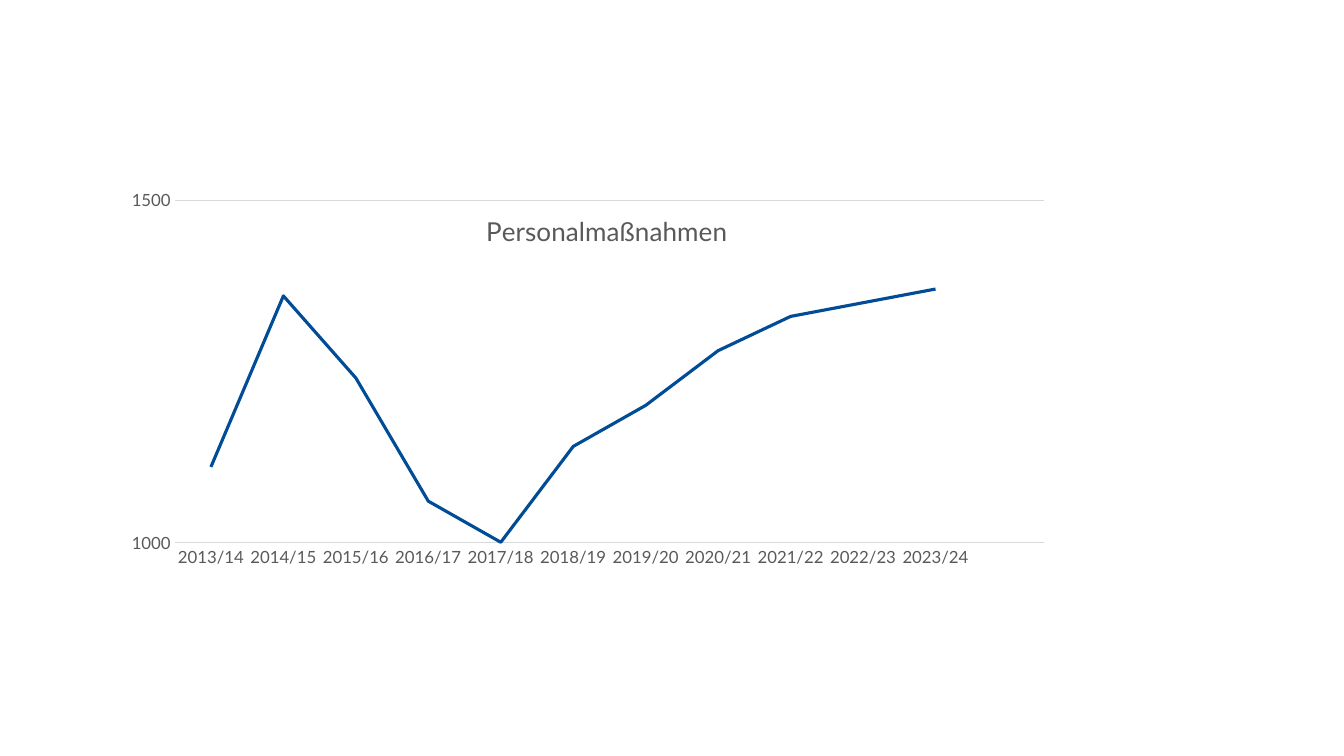
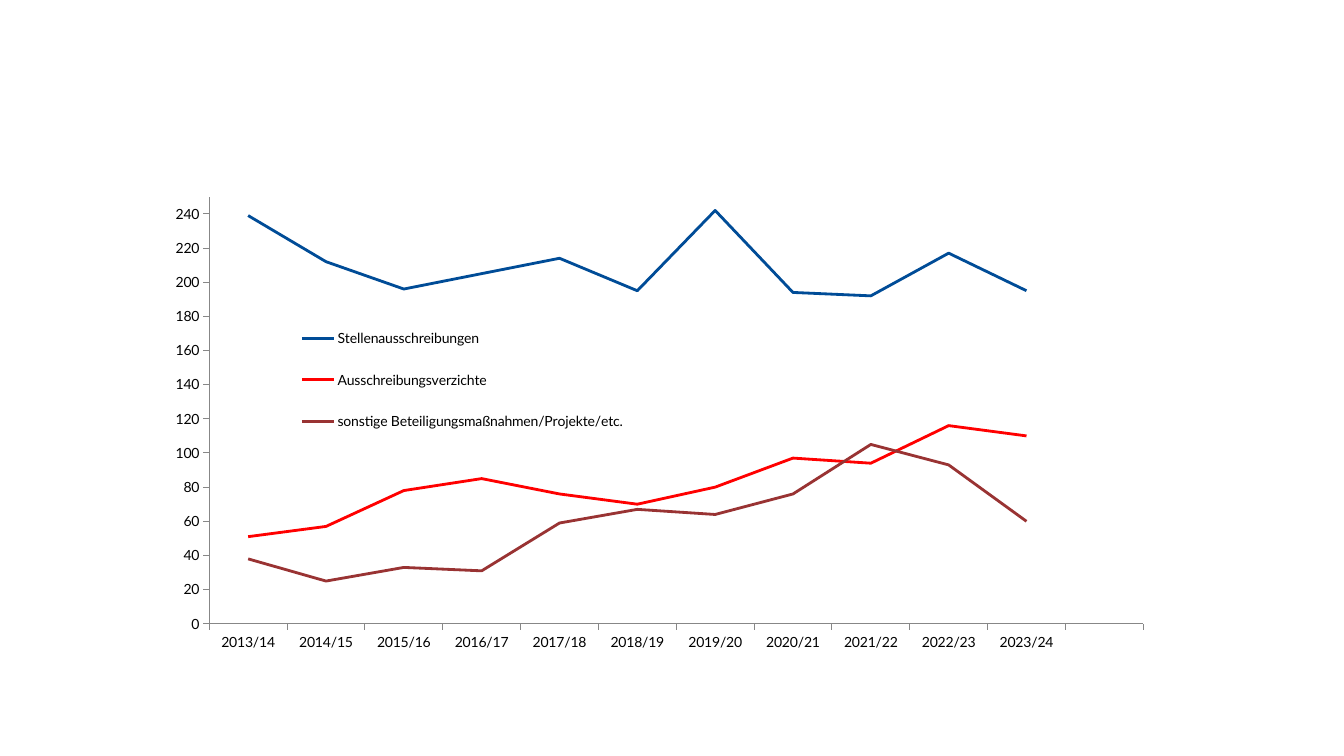
"""Two line charts on staff measures by school year."""
from dataclasses import dataclass
from typing import Any, Optional

from lxml.etree import SubElement
from pptx import Presentation
from pptx.chart.data import CategoryChartData as Data
from pptx.dml.color import RGBColor as Rgb
from pptx.enum.chart import XL_CHART_TYPE as Kind
from pptx.enum.chart import XL_LEGEND_POSITION as Pos
from pptx.enum.chart import XL_TICK_MARK as Tick
from pptx.oxml.ns import qn
from pptx.util import Emu, Pt

PX = 9525
Frame = tuple[float, ...]


@dataclass(frozen=True)
class Theme:
    """Colours and type sizes of the deck."""

    font: str = "Lato"
    blue: str = "004C97"
    red: str = "FF0000"
    brown: str = "993333"
    black: str = "000000"
    text: str = "595959"
    grid: str = "D9D9D9"
    axis: str = "878787"
    small: float = 10
    label: float = 12
    title: float = 18.6
    hair: float = 0.75


@dataclass(frozen=True)
class Line:
    """One series with its colour."""

    name: str
    color: str
    vals: tuple[int, ...]


@dataclass(frozen=True)
class Plot:
    """One chart slide."""

    box: tuple[int, int, int, int]
    inner: Frame
    lines: tuple[Line, ...]
    width: float
    size: float
    color: str
    rule: str
    tick: Tick
    scale: dict[str, float]
    grid: bool = False
    title: Optional[str] = None
    head: Frame = ()
    key: Frame = ()


THEME = Theme()
YEARS = [f"{y}/{y - 1999}" for y in range(2013, 2024)]
STAFF = "Personalmaßnahmen"
PLOTS = (
    Plot(
        box=(110, 179, 1025, 363), inner=(0.055, 0.032, 0.808, 0.898),
        lines=(
            Line(STAFF, THEME.blue,
                 (1110, 1360, 1240, 1060, 1000, 1140, 1200, 1280, 1330, 1350, 1370)),
        ),
        width=2.25, size=THEME.label, color=THEME.text, rule=THEME.grid, tick=Tick.NONE,
        scale={"minimum_scale": 1000, "maximum_scale": 1500, "major_unit": 500},
        grid=True, title=STAFF, head=(0.34, 0.05),
    ),
    Plot(
        box=(0, 179, 1101, 446), inner=(0.181, 0.019, 0.808, 0.912),
        lines=(
            Line("Stellenausschreibungen", THEME.blue,
                 (239, 212, 196, 205, 214, 195, 242, 194, 192, 217, 195)),
            Line("Ausschreibungsverzichte", THEME.red,
                 (51, 57, 78, 85, 76, 70, 80, 97, 94, 116, 110)),
            Line("sonstige Beteiligungsmaßnahmen/Projekte/etc.", THEME.brown,
                 (38, 25, 33, 31, 59, 67, 64, 76, 105, 93, 60)),
        ),
        width=2, size=THEME.small, color=THEME.black, rule=THEME.axis, tick=Tick.OUTSIDE,
        scale={"minimum_scale": 0, "maximum_scale": 250, "major_unit": 20},
        key=(0.255, 0.25, 0.29, 0.32),
    ),
)


def apply(item: Any, form: dict[str, Any]) -> None:
    """Set each named attribute."""
    for name, val in form.items():
        setattr(item, name, val)


def style(font: Any, size: float, color: str) -> None:
    """Set face, size and colour of a font."""
    apply(font, {"name": THEME.font, "size": Pt(size), "bold": False})
    font.color.rgb = Rgb.from_string(color)


def stroke(line: Any, width: float, color: str) -> None:
    """Set width and colour of a line."""
    line.width = Pt(width)
    line.color.rgb = Rgb.from_string(color)


def place(node: Any, frame: Frame, spot: int, inner: bool = False) -> None:
    """Give a chart part a manual layout at the child index."""
    for old in node.findall(qn("c:layout")):
        node.remove(old)
    lay = node.makeelement(qn("c:layout"))
    node.insert(spot, lay)
    man = SubElement(lay, qn("c:manualLayout"))
    rows = [("layoutTarget", "inner")] if inner else []
    rows += [("xMode", "edge"), ("yMode", "edge")]
    rows += zip("xywh", map(str, frame))
    for tag, val in rows:
        SubElement(man, qn(f"c:{tag}")).set("val", val)


def axes(chart: Any, plot: Plot) -> None:
    """Format both axes."""
    for axis in (chart.category_axis, chart.value_axis):
        apply(axis, {"major_tick_mark": plot.tick, "minor_tick_mark": Tick.NONE,
                     "has_major_gridlines": False})
        style(axis.tick_labels.font, plot.size, plot.color)
        stroke(axis.format.line, THEME.hair, plot.rule)
    apply(axis, plot.scale)
    if plot.grid:
        stroke(axis.major_gridlines.format.line, THEME.hair, THEME.grid)
        axis.format.line.fill.background()


def draw(slide: Any, plot: Plot) -> None:
    """Add the chart with its title or legend."""
    data = Data()
    data.categories = [*YEARS, ""]
    for line in plot.lines:
        data.add_series(line.name, (*line.vals, None))
    box = (Emu(n * PX) for n in plot.box)
    chart = slide.shapes.add_chart(Kind.LINE, *box, data).chart
    apply(chart, {"has_title": bool(plot.title), "has_legend": bool(plot.key)})
    style(chart.font, THEME.small, THEME.black)
    chart.plots[0].vary_by_categories = False
    for line, ser in zip(plot.lines, chart.plots[0].series):
        ser.smooth = False
        stroke(ser.format.line, plot.width, line.color)
    axes(chart, plot)
    area = chart.plots[0]._element.getparent()
    place(area, plot.inner, 0, inner=True)
    if plot.title:
        frame = chart.chart_title.text_frame
        frame.text = plot.title
        style(frame.paragraphs[0].runs[0].font, THEME.title, THEME.text)
        place(chart.chart_title._element, plot.head, 1)
    if plot.key:
        apply(chart.legend, {"position": Pos.CORNER, "include_in_layout": True})
        style(chart.legend.font, plot.size, plot.color)
        place(chart.legend._element, plot.key, 1)


def main() -> None:
    """Build and save the deck."""
    deck = Presentation()
    apply(deck, {"slide_width": Emu(1280 * PX), "slide_height": Emu(720 * PX)})
    for plot in PLOTS:
        draw(deck.slides.add_slide(deck.slide_layouts[6]), plot)
    deck.save("out.pptx")


if __name__ == "__main__":
    main()
